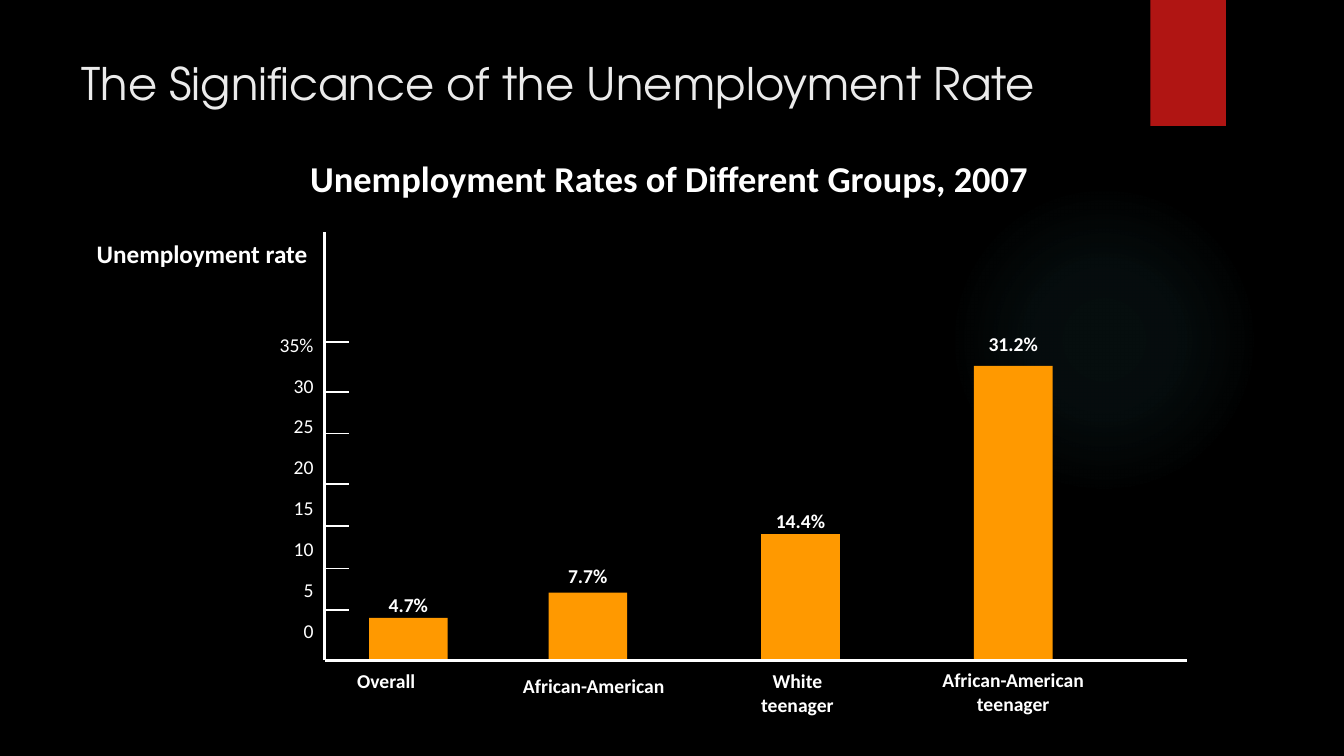
import pptx
import pptx.dml.color
import pptx.enum.shapes
import pptx.enum.text
import pptx.oxml
import pptx.oxml.ns
import pptx.util
from lxml import etree
from pptx.util import Inches

COLORS = {"background": "000000", "accent": "B01513", "title": "EBEBEB",
          "text": "FFFFFF", "bar": "FF9900", "glow": "50B9C1"}
TITLE_FONT = "TeX Gyre Adventor"
BODY_FONT = "Calibri"
ALIGN = pptx.enum.text.PP_ALIGN
SHAPES = pptx.enum.shapes.MSO_SHAPE

# Bar center from the axis, bar height, value, gap from bar top to value top,
# category lines, category center from the axis, category top below the baseline
GROUPS = [
    (0.83, 0.42, "4.7%", 0.25, ["Overall"], 0.61, 0.09),
    (2.61, 0.67, "7.7%", 0.29, ["African-American"], 2.67, 0.14),
    (4.72, 1.25, "14.4%", 0.25, ["White", "teenager"], 4.69, 0.09),
    (6.83, 2.92, "31.2%", 0.34, ["African-American", "teenager"], 6.83, 0.08),
]
SCALE = ["35%", "30", "25", "20", "15", "10", "5", "0"]
TICKS = [1.09, 1.59, 2.0, 2.5, 2.92, 3.34, 3.75]  # below the top of the axis
BAR_WIDTH = 0.78


def rgb(name):
    return pptx.dml.color.RGBColor.from_string(COLORS[name])


def add_text(slide, box, lines, size, align=ALIGN.CENTER, space=0, wrap=True, **font_values):
    """Add a text box without insets; space is the gap in points between lines."""
    frame = slide.shapes.add_textbox(*map(Inches, box)).text_frame
    for side in ("left", "top", "right", "bottom"):
        setattr(frame, f"margin_{side}", 0)
    frame.word_wrap = wrap
    values = {"size": pptx.util.Pt(size), "name": BODY_FONT, "bold": False} | font_values
    for index, line in enumerate(lines):
        paragraph = frame.add_paragraph() if index else frame.paragraphs[0]
        paragraph.alignment = align
        if index and space:
            paragraph.space_before = pptx.util.Pt(space)
        run = paragraph.add_run()
        run.text = line
        run.font.color.rgb = rgb("text")
        for name, value in values.items():
            setattr(run.font, name, value)
    return frame


def add_block(slide, kind, box, color):
    shape = slide.shapes.add_shape(kind, *map(Inches, box))
    shape.shadow.inherit = False
    shape.fill.solid()
    shape.fill.fore_color.rgb = rgb(color)
    shape.line.fill.background()
    return shape


def add_line(slide, start, end, width):
    connector = slide.shapes.add_connector(
        pptx.enum.shapes.MSO_CONNECTOR.STRAIGHT, *map(Inches, start + end))
    connector.line.color.rgb = rgb("text")
    connector.line.width = pptx.util.Pt(width)
    etree.SubElement(connector._element.spPr, pptx.oxml.ns.qn("a:effectLst"))


def add_glow(slide, box):
    """Add a circle whose faint color fades out from its center."""
    glow = add_block(slide, SHAPES.OVAL, box, "glow")
    stops = "".join(
        f'<a:gs pos="{position * 1000}"><a:srgbClr val="{COLORS["glow"]}">'
        f'<a:alpha val="{alpha * 1000}"/></a:srgbClr></a:gs>'
        for position, alpha in ((0, 7), (36, 6), (69, 0), (100, 0)))
    gradient = pptx.oxml.parse_xml(
        f'<a:gradFill {pptx.oxml.ns.nsdecls("a")}><a:gsLst>{stops}</a:gsLst>'
        '<a:path path="circle"><a:fillToRect l="50000" t="50000" r="50000" b="50000"/>'
        '</a:path></a:gradFill>')
    properties = glow._element.spPr
    properties.replace(properties.find(pptx.oxml.ns.qn("a:solidFill")), gradient)


def add_header(slide, box):
    left, top, width, height = box
    add_block(slide, SHAPES.RECTANGLE, (left + 10.6, top, 0.75, 1.25), "accent")
    frame = add_text(slide, (left, top + 0.55, width, height - 0.55),
                     ["The Significance of the Unemployment Rate"], 32,
                     align=ALIGN.LEFT, name=TITLE_FONT)
    frame.paragraphs[0].runs[0].font.color.rgb = rgb("title")


def add_axes(slide, box):
    left, top, width, height = box
    bottom = top + height
    add_line(slide, (left, bottom), (left, top), 2)
    add_line(slide, (left, bottom), (left + width, bottom), 2)
    for tick in TICKS:
        add_line(slide, (left, top + tick), (left + 0.24, top + tick), 1.25)
    add_text(slide, (left - 0.67, top + 1, 0.56, 3.37), SCALE, 14,
             align=ALIGN.RIGHT, space=12.4)
    add_text(slide, (left - 2.39, top + 0.06, 2.22, 0.31), ["Unemployment rate"], 18,
             align=ALIGN.RIGHT, bold=True)


def add_bars(slide, box):
    left, top, _, height = box
    bottom = top + height
    for center, bar_height, value, gap, category, category_center, drop in GROUPS:
        bar_top = bottom - bar_height
        add_block(slide, SHAPES.RECTANGLE,
                  (left + center - BAR_WIDTH / 2, bar_top, BAR_WIDTH, bar_height), "bar")
        add_text(slide, (left + center - 0.5, bar_top - gap, 1, 0.24), [value], 14, bold=True)
        add_text(slide, (left + category_center - 0.95, bottom + drop, 1.9,
                         0.24 * len(category)), category, 14, bold=True)


def main():
    presentation = pptx.Presentation()
    presentation.slide_width = Inches(13.33)
    presentation.slide_height = Inches(7.5)
    slide = presentation.slides.add_slide(presentation.slide_layouts[6])
    slide.background.fill.solid()
    slide.background.fill.fore_color.rgb = rgb("background")

    plot = (3.22, 2.3, 8.55, 4.25)
    add_glow(slide, (9.41, 1.83, 3.08, 3.08))
    add_header(slide, (0.81, 0, 10.1, 1.25))
    add_text(slide, (0.57, 1.55, 12.14, 0.44),
             ["Unemployment Rates of Different Groups, 2007"], 26, bold=True)
    add_bars(slide, plot)
    add_axes(slide, plot)
    presentation.save("out.pptx")


if __name__ == "__main__":
    main()
